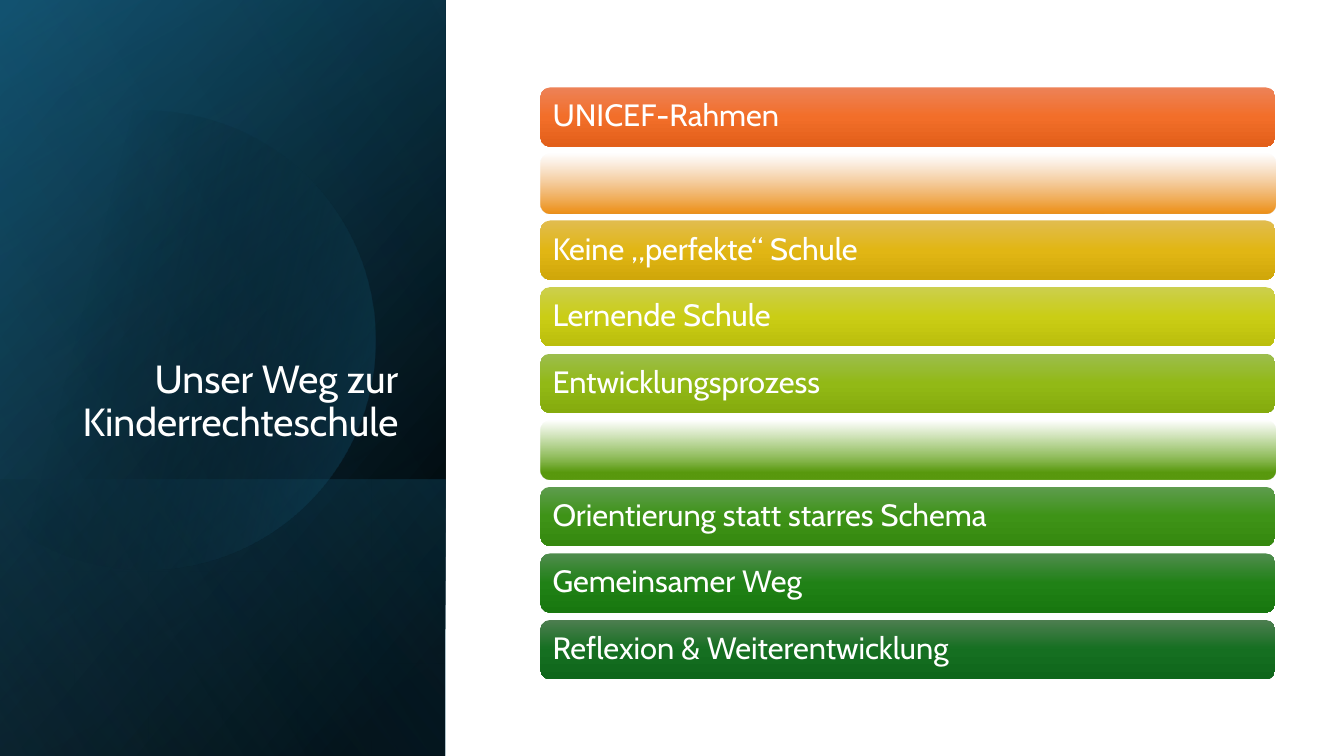
import math

from pptx import Presentation
from pptx import util as u
from pptx.dml.color import RGBColor
from pptx.enum import shapes, text
from pptx.oxml import parse_xml
from pptx.oxml.ns import nsdecls, qn

Pt = u.Pt
FONT = "Cabin"
WHITE = "FFFFFF"
PANEL_LAYERS = [
    (0, [(8, "000000", 100), (100, "104862", 100)], 50),
    (0, [(0, "000000", 0), (99, "156082", 46)], 30),
    (342.7, [(2, "156082", 29), (100, "000000", 30)], 130),
]
DISC_STOPS = [(29, "000000", 0), (100, "156082", 43)]
SHEEN_LAYER = (0, [(0, "000000", 0), (99, "46B1E1", 11)], 120)


def three_tone(light, middle, dark):
    """Return the opaque light-to-dark stops of a labelled bar."""
    return [(0, light, 100), (50, middle, 100), (100, dark, 100)]


STEPS = [
    ("UNICEF-Rahmen", three_tone("ED8257", "F26E29", "E25F1A")),
    ("", [(0, "E99D51", 0), (98, "EE921A", 100), (100, "DE840D", 100)]),
    ("Keine „perfekte“ Schule", three_tone("E1BC4E", "E1B614", "D0A70A")),
    ("Lernende Schule", three_tone("CCCF4E", "CACD15", "BBBE0C")),
    ("Entwicklungsprozess", three_tone("9CBD4E", "92B916", "85AB0D")),
    ("", [(0, "64A617", 0), (67, "5D9E11", 74), (87, "59990E", 100), (100, "59990E", 100)]),
    ("Orientierung statt starres Schema", three_tone("5E9C4E", "3E9317", "35880F")),
    ("Gemeinsamer Weg", three_tone("508C4E", "208116", "18770F")),
    ("Reflexion & Weiterentwicklung", three_tone("4D7E50", "156F21", "0F661B")),
]


def color(hex_value):
    """Turn a hex string into a colour."""
    return RGBColor.from_string(hex_value)


def paint(shape, stops, angle):
    """Give a shape a linear gradient of (percent, colour, opacity) stops and no outline."""
    shape.shadow.inherit = False
    shape.line.fill.background()
    shape.fill.gradient()
    stop_xml = "".join(
        f'<a:gs pos="{position * 1000}"><a:srgbClr val="{tone}">'
        f'<a:alpha val="{opacity * 1000}"/></a:srgbClr></a:gs>'
        for position, tone, opacity in stops
    )
    gradient = parse_xml(
        f'<a:gradFill rotWithShape="1" {nsdecls("a")}><a:gsLst>{stop_xml}</a:gsLst>'
        f'<a:lin ang="{angle * 60000}" scaled="0"/></a:gradFill>'
    )
    properties = shape._element.spPr
    properties.replace(properties.find(qn("a:gradFill")), gradient)


def write(shape, wording, size, anchor, align):
    """Put one white wrapped paragraph into a shape."""
    frame = shape.text_frame
    frame.word_wrap = True
    frame.vertical_anchor = anchor
    frame.text = wording
    paragraph = frame.paragraphs[0]
    paragraph.alignment = align
    paragraph.line_spacing = 0.9
    for run in paragraph.runs:
        run.font.name = FONT
        run.font.size = Pt(size)
        run.font.color.rgb = color(WHITE)


def add_layer(slide, left, top, width, height, stops, angle):
    """Cover a box with a mirrored rectangle turned by a quarter."""
    layer = slide.shapes.add_shape(
        shapes.MSO_SHAPE.RECTANGLE,
        Pt(left + (width - height) / 2), Pt(top + (height - width) / 2),
        Pt(height), Pt(width),
    )
    layer.rotation = 90
    layer._element.spPr.xfrm.set("flipH", "1")
    paint(layer, stops, angle)


def add_disc(slide, center_x, center_y, radius, cut_x):
    """Draw a disc that is cut off along a vertical on its left."""
    reach = math.acos((cut_x - center_x) / radius)
    steps = 120
    angles = [reach * (2 * i / steps - 1) for i in range(steps + 1)]
    rim = [(Pt(center_x + radius * math.cos(a)), Pt(center_y + radius * math.sin(a))) for a in angles]
    builder = slide.shapes.build_freeform(*rim[0])
    builder.add_line_segments(rim[1:], close=True)
    paint(builder.convert_to_shape(), DISC_STOPS, 14)


def add_title_panel(slide, left, top, width, height):
    """Build the dark panel with its disc and the slide title."""
    for offset, stops, angle in PANEL_LAYERS:
        add_layer(slide, left, top + offset, width, height - offset, stops, angle)
    add_disc(slide, left + 104.5, top + 243, 164, left - 10.8)
    offset, stops, angle = SHEEN_LAYER
    add_layer(slide, left, top + offset, width, height - offset, stops, angle)
    title = slide.shapes.add_textbox(Pt(left + 46), Pt(top + 132.5), Pt(245.5), Pt(188.6))
    write(title, "Unser Weg zur Kinderrechteschule", 28,
          text.MSO_ANCHOR.BOTTOM, text.PP_ALIGN.RIGHT)


def add_step_list(slide, left, top, width, height):
    """Stack the bars of the school's steps evenly in a box."""
    bar_height = 42.4
    pitch = (height - bar_height) / (len(STEPS) - 1)
    for row, (label, stops) in enumerate(STEPS):
        bar = slide.shapes.add_shape(
            shapes.MSO_SHAPE.ROUNDED_RECTANGLE,
            Pt(left), Pt(top + row * pitch), Pt(width), Pt(bar_height),
        )
        paint(bar, stops, 90)
        if label:
            frame = bar.text_frame
            frame.margin_left = frame.margin_right = Pt(6.6)
            frame.margin_top = frame.margin_bottom = Pt(6.6)
            write(bar, label, 22, text.MSO_ANCHOR.MIDDLE, text.PP_ALIGN.LEFT)


def main():
    """Build and save the slide."""
    deck = Presentation()
    deck.slide_width, deck.slide_height = Pt(960), Pt(540)
    slide = deck.slides.add_slide(deck.slide_layouts[6])
    add_title_panel(slide, 0, 0, 318.2, 540)
    add_step_list(slide, 386, 62.4, 525, 422.8)
    deck.save("out.pptx")


if __name__ == "__main__":
    main()
